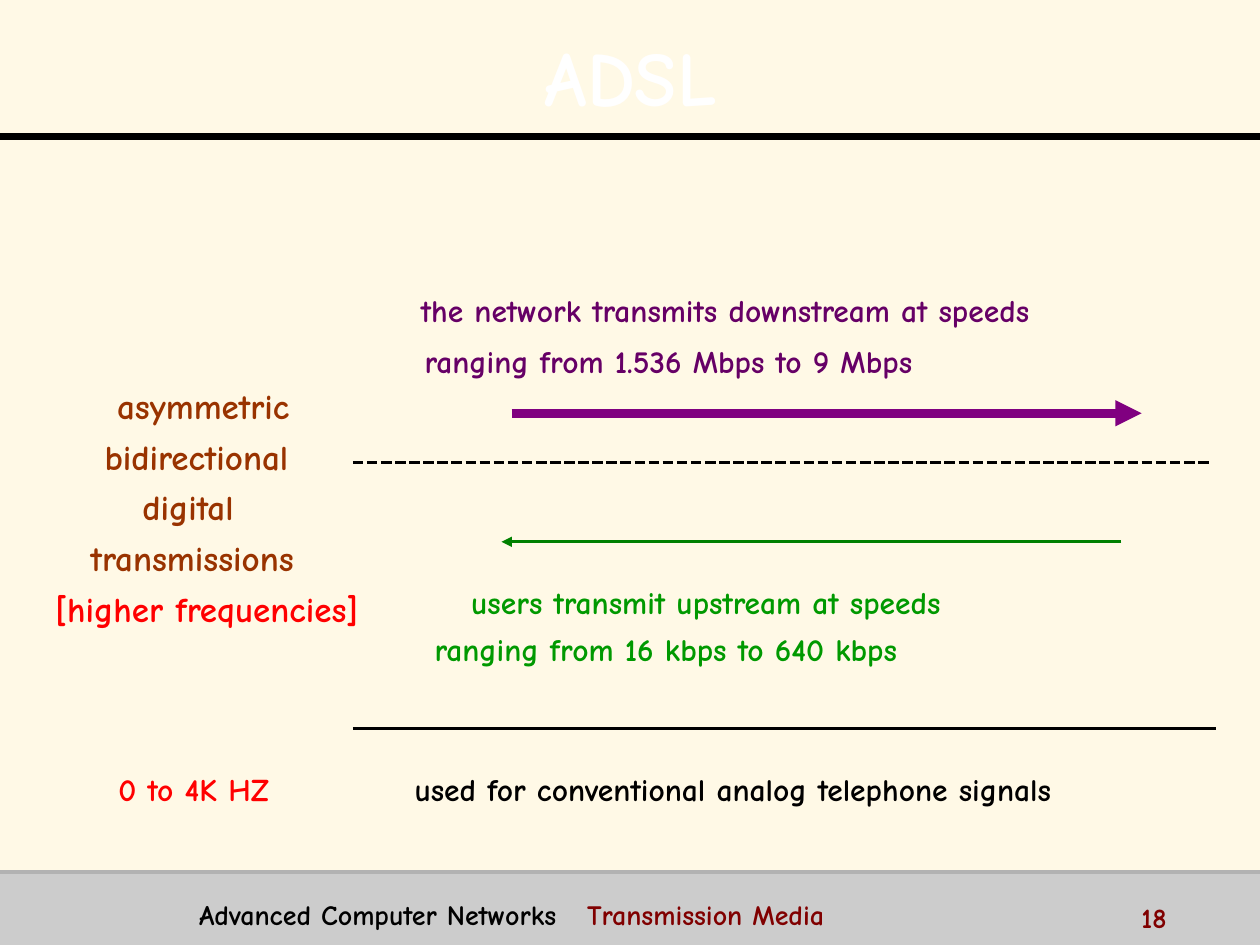
import pptx
import pptx.util
import pptx.dml.color
import pptx.enum.dml
import pptx.enum.shapes
import pptx.enum.text
import lxml.etree
from pptx.util import Inches, Pt

NS = "http://schemas.openxmlformats.org/drawingml/2006/main"
rgb = pptx.dml.color.RGBColor.from_string

deck = pptx.Presentation()
deck.slide_width, deck.slide_height = Inches(10), Inches(7.5)
slide = deck.slides.add_slide(deck.slide_layouts[6])
slide.background.fill.solid()
slide.background.fill.fore_color.rgb = rgb("FFF9E6")


def write(x, y, wide, high, size, gap, lines):
    box = slide.shapes.add_textbox(Inches(x), Inches(y), Inches(wide), Inches(high))
    frame = box.text_frame
    frame.word_wrap = True
    frame.margin_left = frame.margin_right = frame.margin_top = frame.margin_bottom = 0
    frame.text = "\n".join(line[0] for line in lines)
    for i, (para, (words, dent, color)) in enumerate(zip(frame.paragraphs, lines)):
        para._p.get_or_add_pPr().set("marL", str(Inches(dent)))
        para.space_before = Pt(gap if i else 0)
        font = para.runs[0].font
        font.name, font.size, font.bold = "Comic Neue", Pt(size), True
        font.color.rgb = rgb(color)
    return frame


def draw(x1, y1, x2, y2, color, width, head=False, dash=False):
    line = slide.shapes.add_connector(
        pptx.enum.shapes.MSO_CONNECTOR.STRAIGHT,
        Inches(x1), Inches(y1), Inches(x2), Inches(y2))
    line.line.color.rgb = rgb(color)
    line.line.width = Pt(width)
    if dash:
        line.line.dash_style = pptx.enum.dml.MSO_LINE.SQUARE_DOT
    if head:
        tip = lxml.etree.SubElement(line.line._get_or_add_ln(), f"{{{NS}}}tailEnd")
        tip.set("type", "triangle")
    lxml.etree.SubElement(line._element.spPr, f"{{{NS}}}effectLst")


band = slide.shapes.add_shape(
    pptx.enum.shapes.MSO_SHAPE.RECTANGLE,
    Inches(0), Inches(6.92), Inches(10), Inches(0.58))
band.shadow.inherit = False
band.fill.solid()
band.fill.fore_color.rgb = rgb("CCCCCC")
band.line.fill.background()
draw(0, 1.08, 10, 1.08, "000000", 4)
draw(0, 6.92, 10, 6.92, "B2B2B2", 2)

title = write(0.2, 0.13, 9.61, 0.87, 44, 0, [("ADSL", 0, "FFFFFF")])
title.vertical_anchor = pptx.enum.text.MSO_ANCHOR.MIDDLE
head = title.paragraphs[0]
head.alignment = pptx.enum.text.PP_ALIGN.CENTER
head.line_spacing = 1.1
shade = lxml.etree.fromstring(
    f'<a:effectLst xmlns:a="{NS}"><a:outerShdw dist="35921" dir="2700000">'
    '<a:srgbClr val="000000"/></a:outerShdw></a:effectLst>')
head.runs[0].font._element.find(f"{{{NS}}}solidFill").addnext(shade)

write(3.34, 2.31, 6.2, 0.7, 18, 7.3, [
    ("the network transmits downstream at speeds", 0, "660066"),
    ("ranging from 1.536 Mbps to 9 Mbps", 0.03, "660066")])
write(0.44, 3.05, 2.9, 1.9, 20, 5, [
    ("asymmetric", 0.49, "993300"),
    ("bidirectional", 0.39, "993300"),
    ("digital", 0.69, "993300"),
    ("transmissions", 0.28, "993300"),
    ("[higher frequencies]", 0, "FF0000")])
write(3.45, 4.63, 6, 0.65, 18, 5, [
    ("users transmit upstream at speeds", 0.29, "009900"),
    ("ranging from 16 kbps to 640 kbps", 0, "009900")])
write(0.94, 6.11, 2, 0.3, 18, 0, [("0 to 4K HZ", 0, "FF0000")])
write(3.29, 6.11, 6.2, 0.3, 18, 0, [
    ("used for conventional analog telephone signals", 0, "000000")])

draw(2.8, 5.78, 9.65, 5.78, "000000", 2)
draw(8.9, 4.3, 3.98, 4.3, "008000", 1.75, head=True)
draw(2.8, 3.67, 9.61, 3.67, "000000", 2, dash=True)
draw(4.06, 3.28, 9.06, 3.28, "800080", 5, head=True)

write(1.58, 7.12, 3.05, 0.26, 16, 0, [("Advanced Computer Networks", 0, "000000")])
write(4.66, 7.12, 3, 0.26, 16, 0, [("Transmission Media", 0, "800000")])
write(9.06, 7.15, 0.8, 0.26, 16, 0, [("18", 0, "800000")])

deck.save("out.pptx")
